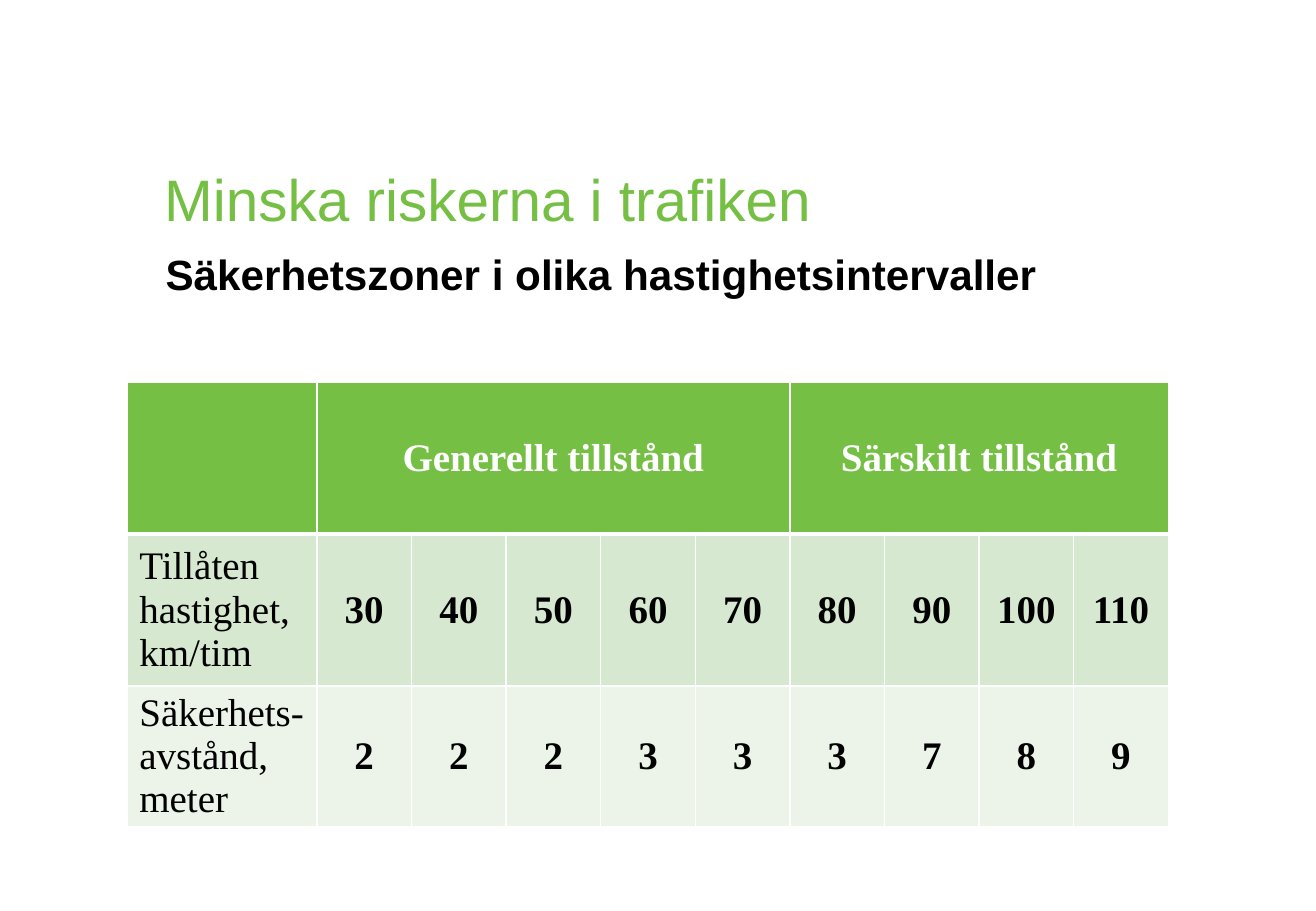
from dataclasses import dataclass

from lxml.etree import SubElement
from pptx import Presentation
from pptx.dml.color import RGBColor
from pptx.enum.text import MSO_ANCHOR, MSO_AUTO_SIZE, PP_ALIGN
from pptx.oxml.ns import qn
from pptx.util import Inches, Pt


@dataclass(frozen=True)
class Theme:
    green: str = "75C044"
    black: str = "000000"
    white: str = "FFFFFF"
    speed_row: str = "D6E8CF"
    distance_row: str = "ECF4E9"
    heading_font: str = "Arial"
    table_font: str = "Times New Roman"
    title_size: int = 36
    subtitle_size: int = 26
    table_size: int = 24
    thin: int = 1
    thick: int = 3


def apply(target, values):
    for attribute, value in values.items():
        setattr(target, attribute, value)


class ZoneSlide:
    WIDTH, HEIGHT = 11.25, 7.79

    def __init__(self, theme):
        self.theme = theme
        self.deck = Presentation()
        apply(self.deck, {"slide_width": Inches(self.WIDTH), "slide_height": Inches(self.HEIGHT)})
        self.slide = self.deck.slides.add_slide(self.deck.slide_layouts[5])

    def area(self, left, top, width, height):
        return {
            "left": Inches(left * self.WIDTH),
            "top": Inches(top * self.HEIGHT),
            "width": Inches(width * self.WIDTH),
            "height": Inches(height * self.HEIGHT),
        }

    def wording(self, frame, text, font, size, colour, bold, align=PP_ALIGN.LEFT):
        frame.text = text
        paragraph = frame.paragraphs[0]
        paragraph.alignment = align
        for run in paragraph.runs:
            apply(run.font, {"name": font, "size": Pt(size), "bold": bold})
            run.font.color.rgb = RGBColor.from_string(colour)

    def heading(self, holder, text, area, size, colour, bold, top_inset):
        apply(holder, area)
        apply(holder.text_frame, {
            "word_wrap": True,
            "auto_size": MSO_AUTO_SIZE.NONE,
            "vertical_anchor": MSO_ANCHOR.TOP,
            "margin_left": Inches(0.11),
            "margin_right": Inches(0.11),
            "margin_top": Inches(top_inset),
            "margin_bottom": Inches(0.06),
        })
        self.wording(holder.text_frame, text, self.theme.heading_font, size, colour, bold)

    def title(self, text, area):
        theme = self.theme
        self.heading(self.slide.shapes.title, text, area, theme.title_size, theme.green, False, 0.12)

    def subtitle(self, text, area):
        theme = self.theme
        holder = self.slide.shapes.add_textbox(**area)
        self.heading(holder, text, area, theme.subtitle_size, theme.black, True, 0.08)

    def cell(self, cell, fill, bottom):
        theme = self.theme
        properties = cell._tc.get_or_add_tcPr()
        for side, width in {"L": theme.thin, "R": theme.thin, "T": theme.thin, "B": bottom}.items():
            border = SubElement(properties, qn(f"a:ln{side}"), w=str(Pt(width)))
            SubElement(SubElement(border, qn("a:solidFill")), qn("a:srgbClr"), val=theme.white)
        cell.fill.solid()
        cell.fill.fore_color.rgb = RGBColor.from_string(fill)
        cell.vertical_anchor = MSO_ANCHOR.MIDDLE

    def table(self, area, groups, rows, heights):
        theme = self.theme
        column_count = 1 + sum(span for _, span in groups)
        table = self.slide.shapes.add_table(len(rows) + 1, column_count, **area).table
        unit = area["width"] // (column_count + 1)
        for index, column in enumerate(table.columns):
            column.width = unit * (2 if index == 0 else 1)
        for row, height in zip(table.rows, heights):
            row.height = Inches(height * self.HEIGHT)

        for cell in table.rows[0].cells:
            self.cell(cell, theme.green, theme.thick)
        start = 1
        for name, span in groups:
            group = table.cell(0, start)
            group.merge(table.cell(0, start + span - 1))
            self.wording(group.text_frame, name, theme.table_font, theme.table_size,
                         theme.white, True, PP_ALIGN.CENTER)
            start += span

        for row_index, (fill, label, values) in enumerate(rows, 1):
            for column_index, content in enumerate([label, *values]):
                cell = table.cell(row_index, column_index)
                is_value = column_index > 0
                self.cell(cell, fill, theme.thin)
                self.wording(cell.text_frame, str(content), theme.table_font, theme.table_size,
                             theme.black, is_value, PP_ALIGN.CENTER if is_value else PP_ALIGN.LEFT)


def main():
    theme = Theme()
    zones = ZoneSlide(theme)
    zones.title("Minska riskerna i trafiken", zones.area(0.115, 0.164, 0.756, 0.187))
    zones.subtitle("Säkerhetszoner i olika hastighetsintervaller",
                   zones.area(0.116, 0.262, 0.805, 0.374))
    zones.table(
        zones.area(0.097, 0.42, 0.791, 0.487),
        [("Generellt tillstånd", 5), ("Särskilt tillstånd", 4)],
        [
            (theme.speed_row, "Tillåten hastighet,\vkm/tim", range(30, 120, 10)),
            (theme.distance_row, "Säkerhets-avstånd,\vmeter", [2, 2, 2, 3, 3, 3, 7, 8, 9]),
        ],
        [0.166, 0.167, 0.154],
    )
    zones.deck.save("out.pptx")


if __name__ == "__main__":
    main()
